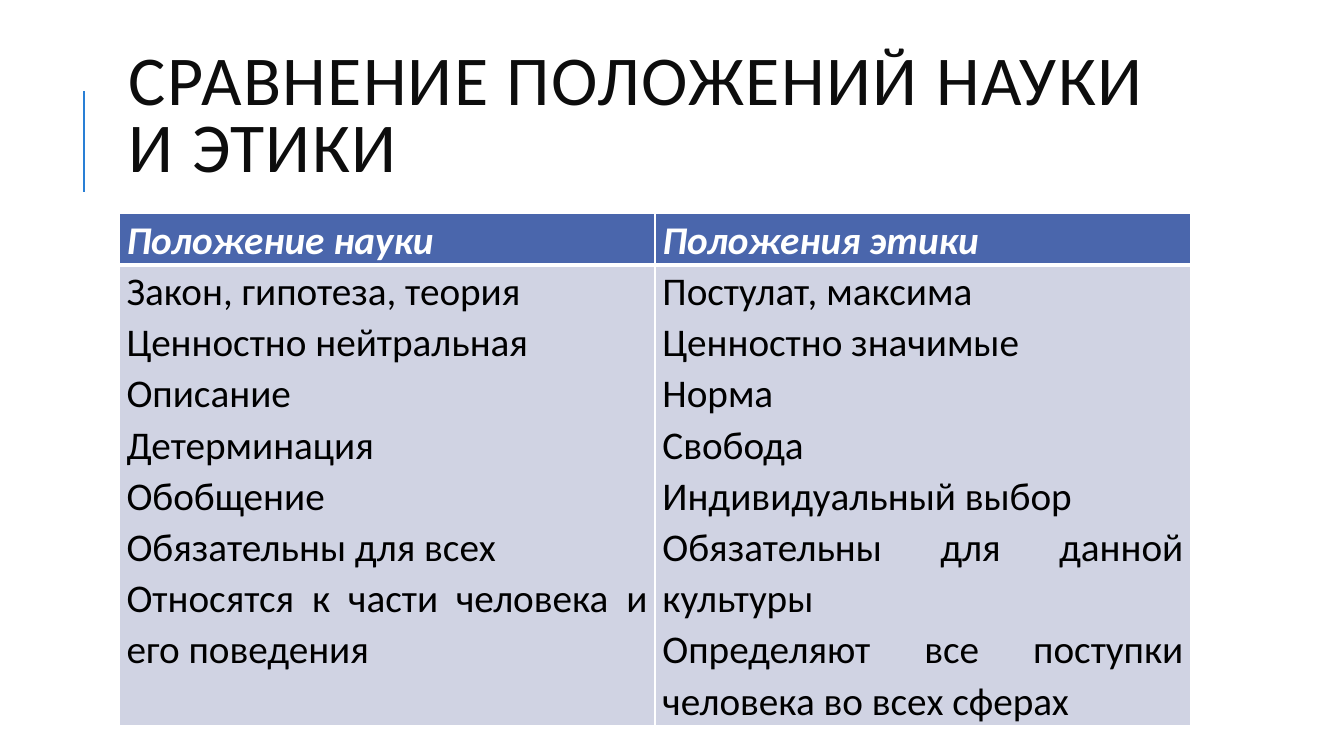
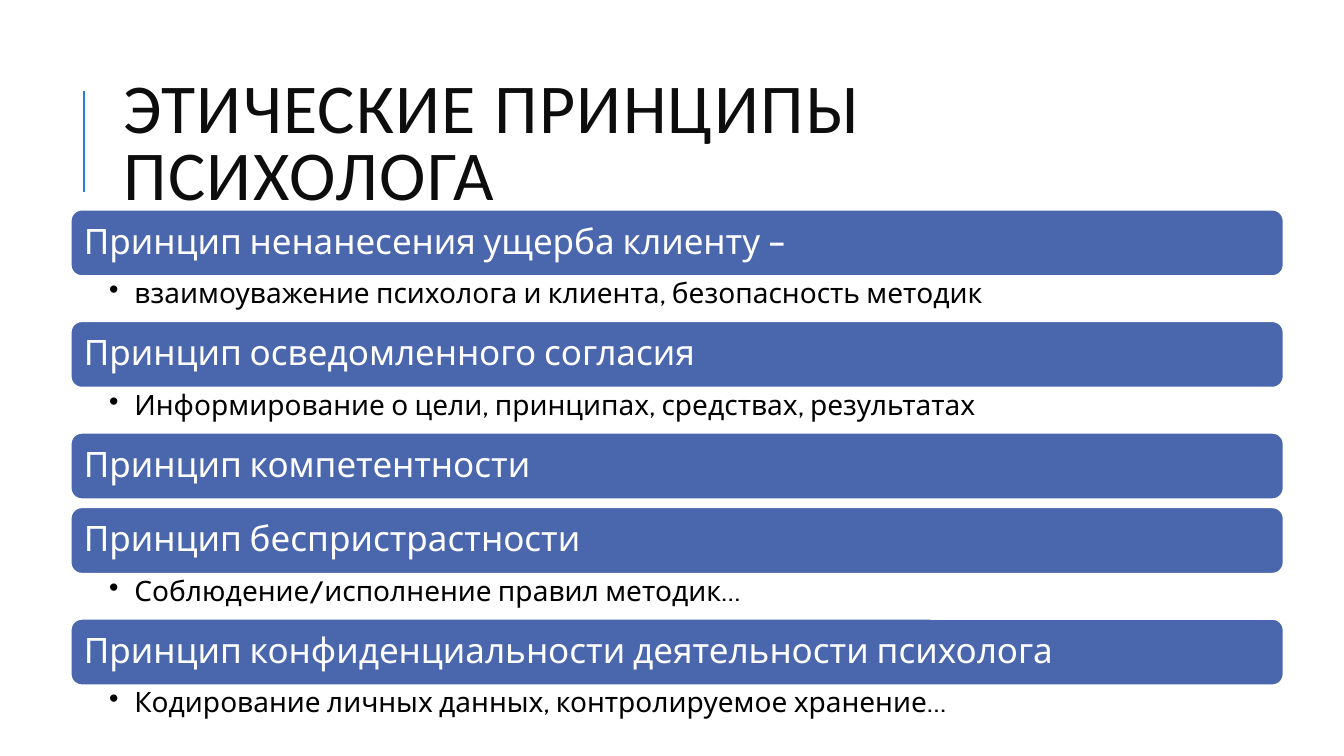
from dataclasses import dataclass

from lxml import etree
from pptx import Presentation
from pptx.dml.color import RGBColor
from pptx.enum.shapes import MSO_CONNECTOR, MSO_SHAPE
from pptx.enum.text import MSO_ANCHOR, PP_ALIGN
from pptx.oxml.ns import qn
from pptx.util import Pt

LINE = MSO_CONNECTOR.STRAIGHT
ROUND = MSO_SHAPE.ROUNDED_RECTANGLE
MIDDLE, TOP = MSO_ANCHOR.MIDDLE, MSO_ANCHOR.TOP
LEFT, JUST = PP_ALIGN.LEFT, PP_ALIGN.JUSTIFY


@dataclass(frozen=True)
class Theme:
    blue: str = "4A66AC"
    rule: str = "297FD5"
    pale: str = "D0D3E3"
    ink: str = "0D0D0D"
    black: str = "000000"
    white: str = "FFFFFF"
    main: str = "Calibri"
    art: str = "Cabin"
    title: int = 50
    table: int = 28
    band: int = 25
    note: int = 20


T = Theme()


def write(frame, lines, font, size, color, space, align=LEFT, bold=False):
    frame.word_wrap = True
    frame.text = "\n".join(lines)
    for para in frame.paragraphs:
        para.alignment = align
        para.line_spacing = space
        for run in para.runs:
            run.font.name = font
            run.font.size = Pt(size)
            run.font.bold = run.font.italic = bold
            run.font.color.rgb = RGBColor.from_string(color)


def pad(frame, left, top, right, bottom):
    frame.margin_left, frame.margin_top = Pt(left), Pt(top)
    frame.margin_right, frame.margin_bottom = Pt(right), Pt(bottom)


deck = Presentation()
deck.slide_width, deck.slide_height = Pt(960), Pt(540)

# Slides with their side rule and title
heads = [
    ("СРАВНЕНИЕ ПОЛОЖЕНИЙ НАУКИ И ЭТИКИ", 85, 26),
    ("ЭТИЧЕСКИЕ ПРИНЦИПЫ ПСИХОЛОГА", 81, 46),
]
slides = []
for text, left, top in heads:
    slide = deck.slides.add_slide(deck.slide_layouts[6])
    slides.append(slide)
    rule = slide.shapes.add_connector(LINE, Pt(60), Pt(137), Pt(60), Pt(65))
    rule.line.color.rgb = RGBColor.from_string(T.rule)
    rule.line.width = Pt(1.5)
    etree.SubElement(rule._element.spPr, qn("a:effectLst"))
    frame = slide.shapes.add_textbox(Pt(left), Pt(top), Pt(765.6), Pt(118)).text_frame
    write(frame, [text], T.main, T.title, T.ink, 0.8)
    frame.vertical_anchor = MIDDLE
    frame.paragraphs[0].runs[0].font._element.set("spc", "100")

# Table: science against ethics
rows = [
    (["Положение науки"], ["Положения этики"]),
    (
        [
            "Закон, гипотеза, теория",
            "Ценностно нейтральная",
            "Описание",
            "Детерминация",
            "Обобщение",
            "Обязательны для всех",
            "Относятся к части человека и его поведения",
        ],
        [
            "Постулат, максима",
            "Ценностно значимые",
            "Норма",
            "Свобода",
            "Индивидуальный выбор",
            "Обязательны для данной культуры",
            "Определяют все поступки человека во всех сферах",
        ],
    ),
]
looks = [(36.5, T.blue, T.white, True, 3), (329, T.pale, T.black, False, 1)]
table = slides[0].shapes.add_table(2, 2, Pt(85), Pt(152.6), Pt(765.6), Pt(365.5)).table
for y, (high, fill, color, bold, base) in enumerate(looks):
    table.rows[y].height = Pt(high)
    for x, lines in enumerate(rows[y]):
        cell = table.cell(y, x)
        write(cell.text_frame, lines, T.main, T.table, color, 1.07, JUST, bold)
        pad(cell, 5.4, 0, 5.4, 0)
        cell.vertical_anchor = TOP
        props = cell._tc.get_or_add_tcPr()
        for side, width in (("L", 1), ("R", 1), ("T", 3 if y else 1), ("B", base)):
            edge = etree.SubElement(props, qn(f"a:ln{side}"), w=str(Pt(width)))
            paint = etree.SubElement(edge, qn("a:solidFill"))
            etree.SubElement(paint, qn("a:srgbClr"), val=T.white)
        cell.fill.solid()
        cell.fill.fore_color.rgb = RGBColor.from_string(fill)

# Bands: each principle with its note below, if any
bands = [
    ("Принцип ненанесения ущерба клиенту –",
     "взаимоуважение психолога и клиента, безопасность методик"),
    ("Принцип осведомленного согласия",
     "Информирование о цели, принципах, средствах, результатах"),
    ("Принцип компетентности", None),
    ("Принцип беспристрастности", "Соблюдение/исполнение правил методик…"),
    ("Принцип конфиденциальности деятельности психолога",
     "Кодирование личных данных, контролируемое хранение…"),
]
left, top, wide = 50.5, 149.8, 866.3
high, deep, gap = 47.4, 32.3, 5.8
shapes = slides[1].shapes
for name, note in bands:
    band = shapes.add_shape(ROUND, Pt(left), Pt(top), Pt(wide), Pt(high))
    band.shadow.inherit = False
    band.fill.solid()
    band.fill.fore_color.rgb = RGBColor.from_string(T.blue)
    band.line.color.rgb = RGBColor.from_string(T.white)
    band.line.width = Pt(1.25)
    write(band.text_frame, [name], T.art, T.band, T.white, 0.9)
    pad(band.text_frame, 7.2, 5, 7.2, 5)
    band.text_frame.vertical_anchor = MIDDLE
    top += high
    if not note:
        top += gap
        continue
    frame = shapes.add_textbox(Pt(left), Pt(top), Pt(wide), Pt(deep)).text_frame
    write(frame, [note], T.art, T.note, T.black, 0.9)
    pad(frame, 27.5, 2.5, 14, 2.5)
    props = frame.paragraphs[0]._p.get_or_add_pPr()
    props.set("marL", str(Pt(18)))
    props.set("indent", str(-Pt(18)))
    etree.SubElement(props, qn("a:buChar"), char="•")
    top += deep

deck.save("out.pptx")
